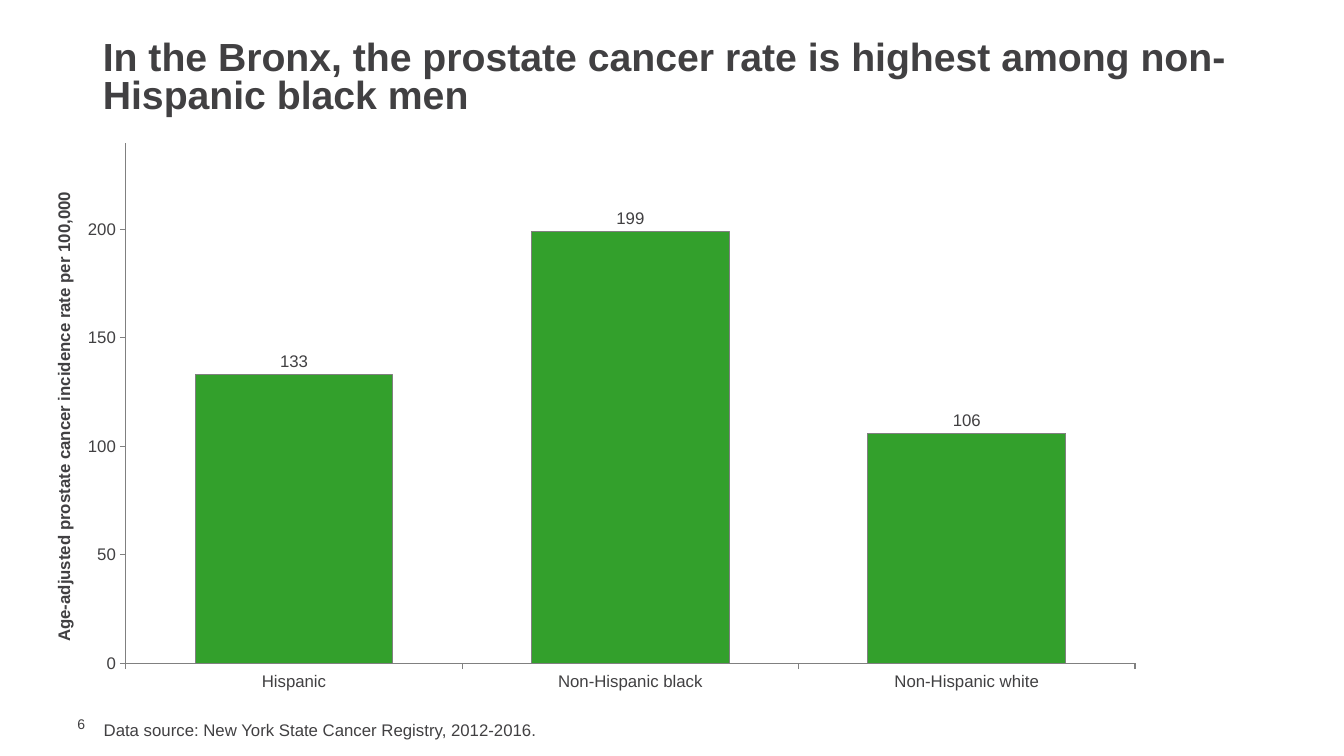
from dataclasses import dataclass

from lxml import etree
from pptx import Presentation
from pptx.chart.data import CategoryChartData
from pptx.dml.color import RGBColor
from pptx.enum.chart import XL_CHART_TYPE as ChartType
from pptx.enum.chart import XL_LABEL_POSITION as LabelPosition
from pptx.enum.chart import XL_TICK_MARK as TickMark
from pptx.enum.text import MSO_ANCHOR as Anchor
from pptx.enum.text import PP_ALIGN as Align
from pptx.oxml import parse_xml
from pptx.oxml.ns import nsdecls
from pptx.util import Inches, Pt

FONT = "Arial"
DARK = "414042"
GREY = "808080"
GREEN = "33A02C"


@dataclass(frozen=True)
class Box:
    left: float
    top: float
    width: float
    height: float

    def lengths(self) -> tuple:
        return tuple(Inches(n) for n in (self.left, self.top, self.width, self.height))


@dataclass(frozen=True)
class Note:
    text: str
    box: Box
    size: float
    anchor: Anchor
    insets: tuple[float, float, float, float]


NOTES = [
    Note("6", Box(0.67, 7.1, 0.43, 0.17), 10, Anchor.MIDDLE, (0.1, 0, 0, 0)),
    Note("Data source: New York State Cancer Registry, 2012-2016.",
         Box(0.93, 7.09, 9.92, 0.3), 12, Anchor.TOP, (0.1, 0.05, 0.1, 0.05)),
]
RATES = {"Hispanic": 133, "Non-Hispanic black": 199, "Non-Hispanic white": 106}
PLOT = {"x": 0.068, "y": 0.029, "w": 0.91, "h": 0.903}


def color(hex_value: str) -> RGBColor:
    return RGBColor.from_string(hex_value)


def style_font(font, size: float, bold: bool = False) -> None:
    font.name, font.size, font.bold = FONT, Pt(size), bold
    font.color.rgb = color(DARK)


def style_line(line) -> None:
    line.color.rgb = color(GREY)
    line.width = Pt(0.75)


def write(frame, text: str, *, size: float, bold: bool = False, spacing: float = 1.0,
          anchor: Anchor = Anchor.TOP, insets: tuple = (0.1, 0.05, 0.1, 0.05)) -> None:
    frame.word_wrap = True
    frame.vertical_anchor = anchor
    frame.margin_left, frame.margin_top, frame.margin_right, frame.margin_bottom = map(Inches, insets)
    paragraph = frame.paragraphs[0]
    paragraph.alignment = Align.LEFT
    paragraph.line_spacing = spacing
    run = paragraph.add_run()
    run.text = text
    style_font(run.font, size, bold)


def add_note(slide, note: Note) -> None:
    shape = slide.shapes.add_textbox(*note.box.lengths())
    write(shape.text_frame, note.text, size=note.size, anchor=note.anchor, insets=note.insets)


def style_axis(axis) -> None:
    axis.has_major_gridlines = False
    axis.major_tick_mark = TickMark.OUTSIDE
    axis.minor_tick_mark = TickMark.NONE
    style_font(axis.tick_labels.font, 12)
    style_line(axis.format.line)


def set_plot_area(chart) -> None:
    plot_area = chart.plots[0]._element.getparent()
    for layout in plot_area.findall("{*}layout"):
        plot_area.remove(layout)
    layout = parse_xml(f"<c:layout {nsdecls('c')}><c:manualLayout/></c:layout>")
    settings = {"layoutTarget": "inner", "xMode": "edge", "yMode": "edge", **PLOT}
    for name, value in settings.items():
        etree.SubElement(layout[0], f"{{{layout.nsmap['c']}}}{name}").set("val", str(value))
    plot_area.insert(0, layout)


def add_rate_chart(slide, box: Box) -> None:
    data = CategoryChartData(number_format="0")
    data.categories = list(RATES)
    data.add_series("Series 1", list(RATES.values()))
    chart = slide.shapes.add_chart(ChartType.COLUMN_CLUSTERED, *box.lengths(), data).chart
    chart.has_legend = chart.has_title = False
    style_font(chart.font, 10)
    set_plot_area(chart)

    for axis in (chart.category_axis, chart.value_axis):
        style_axis(axis)
    rate_axis = chart.value_axis
    rate_axis.minimum_scale, rate_axis.maximum_scale, rate_axis.major_unit = 0, 240, 50
    rate_axis.tick_labels.number_format = "0"
    rate_axis.tick_labels.number_format_is_linked = False
    title_frame = rate_axis.axis_title.text_frame
    run = title_frame.paragraphs[0].add_run()
    run.text = "Age-adjusted prostate cancer incidence rate per 100,000"
    style_font(run.font, 12, bold=True)
    title_frame._txBody.bodyPr.set("rot", "-5400000")
    title_frame._txBody.bodyPr.set("vert", "horz")

    plot = chart.plots[0]
    plot.gap_width = 70
    plot.vary_by_categories = False
    series = plot.series[0]
    series.format.fill.solid()
    series.format.fill.fore_color.rgb = color(GREEN)
    style_line(series.format.line)
    labels = series.data_labels
    labels.show_value = True
    labels.number_format, labels.number_format_is_linked = "0", False
    labels.position = LabelPosition.OUTSIDE_END
    style_font(labels.font, 12)


def main() -> None:
    """Build the slide on prostate cancer rates in the Bronx."""
    presentation = Presentation()
    presentation.slide_width, presentation.slide_height = Inches(13.33), Inches(7.5)
    slide = presentation.slides.add_slide(presentation.slide_layouts[5])
    title = slide.shapes.title
    title.left, title.top, title.width, title.height = Box(0.92, 0.36, 11.5, 0.85).lengths()
    write(title.text_frame,
          "In the Bronx, the prostate cancer rate is highest among non-Hispanic black men",
          size=28, bold=True, spacing=0.8, anchor=Anchor.MIDDLE)
    add_rate_chart(slide, Box(0.5, 1.25, 11, 5.72))
    for note in NOTES:
        add_note(slide, note)
    presentation.save("out.pptx")


if __name__ == "__main__":
    main()
